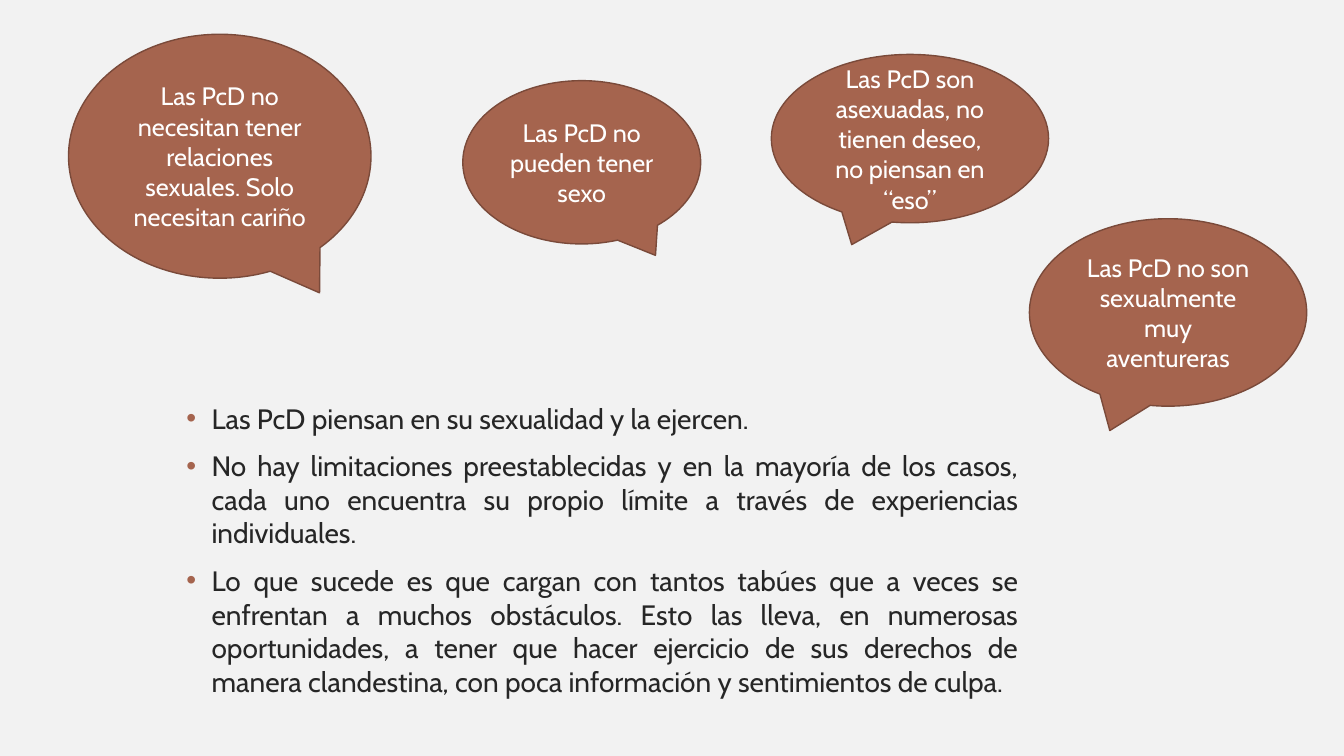
from pptx import Presentation
from pptx.dml.color import RGBColor
from pptx.enum.shapes import MSO_SHAPE
from pptx.enum.text import MSO_ANCHOR, PP_ALIGN
from pptx.oxml.ns import qn
from pptx.util import Inches, Pt
from lxml import etree

CALLOUT = MSO_SHAPE.OVAL_CALLOUT
TOP, MIDDLE = MSO_ANCHOR.TOP, MSO_ANCHOR.MIDDLE
CENTER, JUSTIFY = PP_ALIGN.CENTER, PP_ALIGN.JUSTIFY

FONT = "Cabin"
PAPER, CLAY, EDGE, INK, WHITE = "F2F2F2", "A5644E", "7A4A3A", "262626", "FFFFFF"
LEFT_TAIL = (-0.21, 0.63)

MYTHS = [
    ("Las PcD son asexuadas, no tienen deseo, no piensan en “eso”",
     (7.65, 0.54, 2.75, 1.67), LEFT_TAIL),
    ("Las PcD no son sexualmente muy aventureras",
     (10.21, 2.17, 2.75, 1.86), LEFT_TAIL),
    ("Las PcD no pueden tener sexo",
     (4.59, 0.8, 2.36, 1.62), (0.31, 0.57)),
    ("Las PcD no necesitan tener relaciones sexuales. Solo necesitan cariño",
     (0.68, 0.34, 3, 2.42), (0.33, 0.56)),
]
FACTS = [
    "Las PcD piensan en su sexualidad y la ejercen.",
    "No hay limitaciones preestablecidas y en la mayoría de los casos, "
    "cada uno encuentra su propio límite a través de experiencias individuales.",
    "Lo que sucede es que cargan con tantos tabúes que a veces se enfrentan "
    "a muchos obstáculos. Esto las lleva, en numerosas oportunidades, a tener "
    "que hacer ejercicio de sus derechos de manera clandestina, con poca "
    "información y sentimientos de culpa.",
]
FACT_BOX = (1.75, 3.93, 8.45, 2.82)


def color(code):
    return RGBColor.from_string(code)


def add_bullet(para, code):
    props = para._p.get_or_add_pPr()
    props.set("marL", str(Inches(0.25)))
    props.set("indent", str(-Inches(0.25)))
    tint = etree.SubElement(props, qn("a:buClr"))
    etree.SubElement(tint, qn("a:srgbClr"), val=code)
    etree.SubElement(props, qn("a:buFont"), typeface="Arial")
    etree.SubElement(props, qn("a:buChar"), char="•")


def write(shape, lines, size, ink, align, anchor, before=0, bullet=None):
    frame = shape.text_frame
    frame.word_wrap = True
    frame.vertical_anchor = anchor
    for i, line in enumerate(lines):
        para = frame.add_paragraph() if i else frame.paragraphs[0]
        para.alignment = align
        para.space_before = Pt(before if i else 0)
        run = para.add_run()
        run.text = line
        run.font.name = FONT
        run.font.size = Pt(size)
        run.font.color.rgb = color(ink)
        if bullet:
            add_bullet(para, bullet)


def add_myth(slide, text, box, tail):
    bubble = slide.shapes.add_shape(CALLOUT, *map(Inches, box))
    bubble.shadow.inherit = False
    for i, share in enumerate(tail):
        bubble.adjustments[i] = share
    bubble.fill.solid()
    bubble.fill.fore_color.rgb = color(CLAY)
    bubble.line.color.rgb = color(EDGE)
    bubble.line.width = Pt(1)
    write(bubble, [text], size=18, ink=WHITE, align=CENTER, anchor=MIDDLE)


def main():
    deck = Presentation()
    deck.slide_width, deck.slide_height = Inches(13.33), Inches(7.5)
    slide = deck.slides.add_slide(deck.slide_layouts[6])
    slide.background.fill.solid()
    slide.background.fill.fore_color.rgb = color(PAPER)
    facts = slide.shapes.add_textbox(*map(Inches, FACT_BOX))
    write(facts, FACTS, size=20, ink=INK, align=JUSTIFY, anchor=TOP,
          before=10, bullet=CLAY)
    for text, box, tail in MYTHS:
        add_myth(slide, text, box, tail)
    deck.save("out.pptx")


if __name__ == "__main__":
    main()
